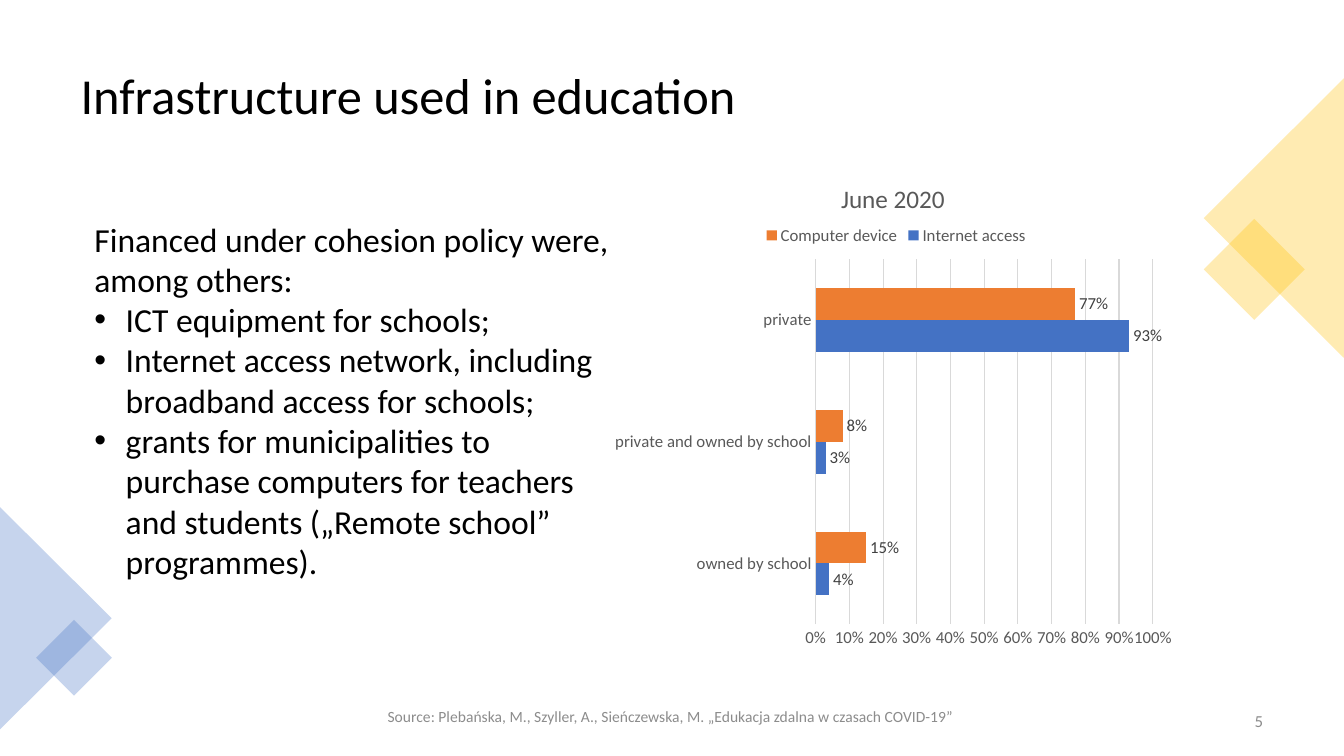
from dataclasses import dataclass

from lxml import etree
from pptx import Presentation
from pptx.chart.data import CategoryChartData
from pptx.dml.color import RGBColor
from pptx.enum.chart import XL_CHART_TYPE, XL_LABEL_POSITION, XL_LEGEND_POSITION, XL_TICK_MARK
from pptx.enum.shapes import MSO_SHAPE
from pptx.enum.text import MSO_ANCHOR, PP_ALIGN
from pptx.oxml.ns import qn
from pptx.util import Cm, Pt

BAR_CLUSTERED = XL_CHART_TYPE.BAR_CLUSTERED
OUTSIDE_END = XL_LABEL_POSITION.OUTSIDE_END
LEGEND_TOP = XL_LEGEND_POSITION.TOP
NO_TICK = XL_TICK_MARK.NONE
SQUARE, TRIANGLE = MSO_SHAPE.RECTANGLE, MSO_SHAPE.ISOSCELES_TRIANGLE
TOP, MIDDLE = MSO_ANCHOR.TOP, MSO_ANCHOR.MIDDLE
LEFT, CENTER, RIGHT = PP_ALIGN.LEFT, PP_ALIGN.CENTER, PP_ALIGN.RIGHT


@dataclass(frozen=True)
class Theme:
    """Fonts, colours and type sizes of the slide."""
    font: str = "Calibri"
    ink: str = "000000"
    footer: str = "8C8C8C"
    axis: str = "595959"
    label: str = "404040"
    grid: str = "D9D9D9"
    blue: str = "4472C4"
    orange: str = "ED7D31"
    yellow: str = "FFC000"
    title_size: float = 36
    body_size: float = 24
    chart_title_size: float = 18
    chart_size: float = 12
    source_size: float = 11.1
    number_size: float = 12


class SlideBuilder:
    """Draws styled elements on the current slide."""

    def __init__(self, slide, theme):
        """Keep the slide and its theme."""
        self.slide = slide
        self.theme = theme

    def style(self, font, size, color):
        """Give a font the theme face with a size and colour."""
        font.name = self.theme.font
        font.size = Pt(size)
        font.bold = False
        font.color.rgb = RGBColor.from_string(color)

    def text(self, place, lines, size, color, anchor=MIDDLE, align=LEFT):
        """Add a wrapped text box and return its paragraphs."""
        frame = self.slide.shapes.add_textbox(*map(Cm, place)).text_frame
        frame.word_wrap = True
        frame.vertical_anchor = anchor
        frame.text = "\n".join(lines)
        for para in frame.paragraphs:
            para.alignment = align
            for span in para.runs:
                self.style(span.font, size, color)
        return frame.paragraphs

    def bullet(self, para, indent):
        """Turn a paragraph into a bullet with a hanging indent."""
        props = para._p.get_or_add_pPr()
        props.set("marL", str(Cm(indent)))
        props.set("indent", str(-Cm(indent)))
        etree.SubElement(props, qn("a:buFont"), typeface="Arial")
        etree.SubElement(props, qn("a:buChar"), char="•")

    def ornament(self, kind, place, rotation, color, opacity=30):
        """Add a rotated translucent shape without an outline."""
        shape = self.slide.shapes.add_shape(kind, *map(Cm, place))
        shape.shadow.inherit = False
        shape.rotation = rotation
        shape.line.fill.background()
        shape.fill.solid()
        shape.fill.fore_color.rgb = RGBColor.from_string(color)
        tint = shape._element.spPr.find(".//" + qn("a:srgbClr"))
        etree.SubElement(tint, qn("a:alpha"), val=str(opacity * 1000))

    def arrange(self, part, index, **fractions):
        """Place a chart part by fractions of the chart area."""
        for old in part.findall(qn("c:layout")):
            part.remove(old)
        layout = etree.Element(qn("c:layout"))
        manual = etree.SubElement(layout, qn("c:manualLayout"))
        if "w" in fractions:
            etree.SubElement(manual, qn("c:layoutTarget"), val="inner")
        for side in ("x", "y"):
            etree.SubElement(manual, qn(f"c:{side}Mode"), val="edge")
        for side, value in fractions.items():
            etree.SubElement(manual, qn(f"c:{side}"), val=str(value))
        part.insert(index, layout)

    def bar_chart(self, place, title, categories, series):
        """Add a clustered bar chart of percentages."""
        theme = self.theme
        grid = RGBColor.from_string(theme.grid)
        data = CategoryChartData(number_format="0%")
        data.categories = categories
        for name, values, _ in series:
            data.add_series(name, values)
        chart = self.slide.shapes.add_chart(BAR_CLUSTERED, *map(Cm, place), data).chart
        self.style(chart.font, theme.chart_size, theme.axis)

        chart.has_title = True
        heading = chart.chart_title.text_frame
        heading.text = title
        self.style(heading.paragraphs[0].runs[0].font, theme.chart_title_size, theme.axis)
        self.arrange(chart.chart_title._element, 1, x=0.4, y=0.04)

        chart.has_legend = True
        legend = chart.legend
        legend.position = LEGEND_TOP
        legend.include_in_layout = False
        self.style(legend.font, theme.chart_size, theme.axis)
        self.arrange(legend._element, 1, x=0.27, y=0.13)

        for axis in (chart.category_axis, chart.value_axis):
            axis.major_tick_mark = axis.minor_tick_mark = NO_TICK
            self.style(axis.tick_labels.font, theme.chart_size, theme.axis)
        category_line = chart.category_axis.format.line
        value_axis = chart.value_axis
        value_axis.minimum_scale, value_axis.maximum_scale = 0, 1
        value_axis.major_unit = 0.1
        value_axis.tick_labels.number_format = "0%"
        value_axis.tick_labels.number_format_is_linked = False
        value_axis.format.line.fill.background()
        value_axis.has_major_gridlines = True
        for line in (category_line, value_axis.major_gridlines.format.line):
            line.color.rgb = grid
            line.width = Pt(0.75)

        plot = chart.plots[0]
        plot.gap_width = 182
        plot.vary_by_categories = False
        for bars, (_, _, color) in zip(plot.series, series):
            bars.format.fill.solid()
            bars.format.fill.fore_color.rgb = RGBColor.from_string(color)
            labels = bars.data_labels
            labels.show_value = True
            labels.position = OUTSIDE_END
            labels.number_format = "0%"
            labels.number_format_is_linked = False
            self.style(labels.font, theme.chart_size, theme.label)
        plot_area = chart._chartSpace.find(".//" + qn("c:plotArea"))
        self.arrange(plot_area, 0, x=0.364, y=0.206, w=0.582, h=0.73)


def main():
    """Build the slide and save the deck."""
    theme = Theme()
    deck = Presentation()
    deck.slide_width, deck.slide_height = Cm(33.87), Cm(19.05)
    page = SlideBuilder(deck.slides.add_slide(deck.slide_layouts[6]), theme)

    title = page.text((1.78, 0.89, 30.3, 3.15), ["Infrastructure used in education"],
                      theme.title_size, theme.ink)
    title[0].line_spacing = 0.9

    page.ornament(SQUARE, (30.71, 5.89, 1.8, 1.8), 45, theme.yellow)
    page.ornament(TRIANGLE, (28.58, 3.73, 7.04, 3.53), 270, theme.yellow)
    page.ornament(TRIANGLE, (-1.4, 14.17, 5.61, 2.82), 90, theme.blue)
    page.ornament(SQUARE, (1.19, 15.9, 1.35, 1.35), 45, theme.blue)

    source = "Source: Plebańska, M., Szyller, A., Sieńczewska, M. „Edukacja zdalna w czasach COVID-19”"
    page.text((9.35, 17.55, 15.09, 1.02), [source], theme.source_size, theme.footer, align=CENTER)
    number = page.text((24.46, 17.65, 7.62, 1.02), ["5"], theme.number_size, theme.footer, align=RIGHT)
    number[0].space_after = Pt(6)

    page.bar_chart(
        (15.24, 3.94, 14.6, 12.6), "June 2020",
        ["owned by school", "private and owned by school", "private"],
        [("Internet access", (0.04, 0.03, 0.93), theme.blue),
         ("Computer device", (0.15, 0.08, 0.77), theme.orange)])

    body = page.text((2.13, 5.38, 13.79, 10.52), [
        "Financed under cohesion policy were, among others:",
        "ICT equipment for schools;",
        "Internet access network, including broadband access for schools;",
        "grants for municipalities to purchase computers for teachers and students "
        "(„Remote school” programmes).",
    ], theme.body_size, theme.ink, anchor=TOP)
    for para in body[1:]:
        page.bullet(para, 0.79)

    deck.save("out.pptx")


if __name__ == "__main__":
    main()
